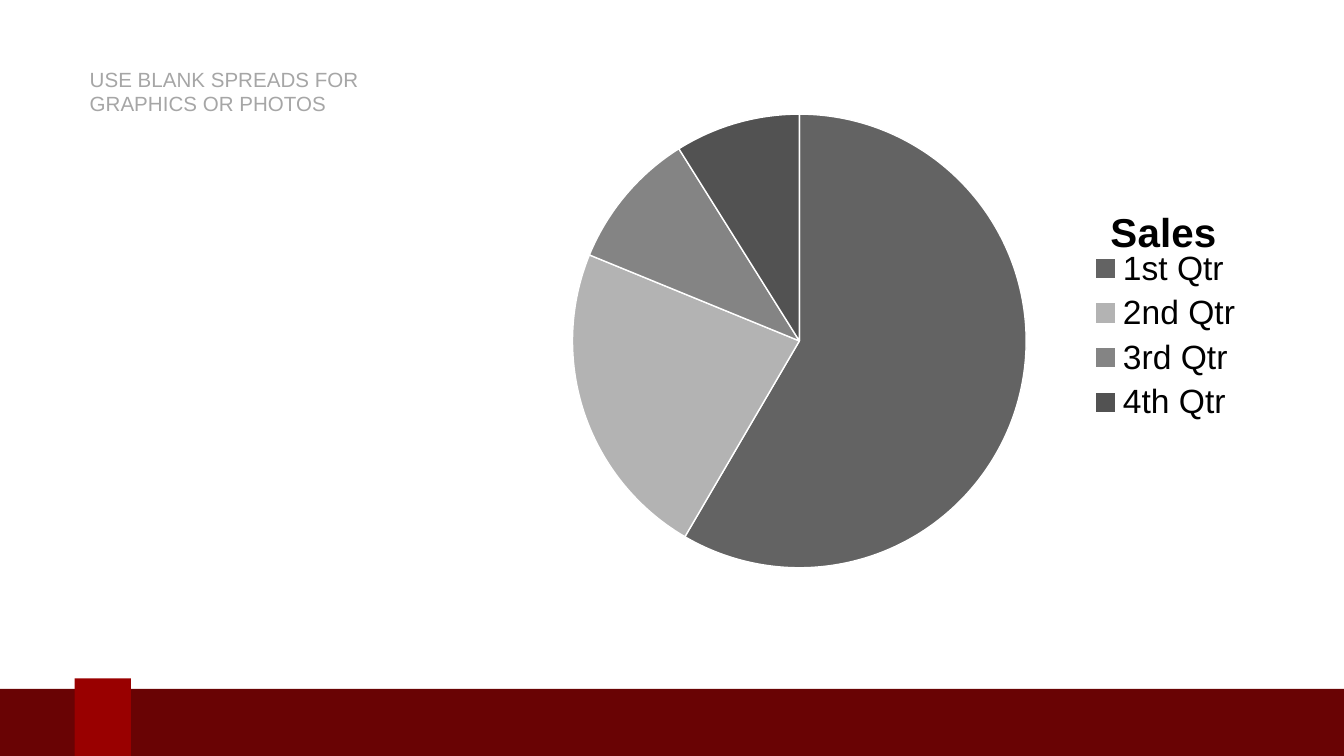
import dataclasses

import lxml.etree
import pptx
import pptx.chart.data
import pptx.dml.color
import pptx.enum.chart
import pptx.enum.shapes
import pptx.enum.text
import pptx.oxml
import pptx.oxml.ns
import pptx.util

Pt = pptx.util.Pt
FACE = "Arial"


@dataclasses.dataclass
class Box:
    left: float
    top: float
    width: float
    height: float

    def place(self) -> list:
        return [Pt(n) for n in (self.left, self.top, self.width, self.height)]


@dataclasses.dataclass
class Bar:
    box: Box
    fill: str


@dataclasses.dataclass
class Slice:
    name: str
    value: int
    fill: str


BARS = [
    Bar(Box(0, 369, 720, 36), "690304"),
    Bar(Box(40, 363.4, 30.2, 41.6), "990000"),
]
SLICES = [
    Slice("1st Qtr", 59, "636363"),
    Slice("2nd Qtr", 23, "B3B3B3"),
    Slice("3rd Qtr", 10, "848484"),
    Slice("4th Qtr", 9, "525252"),
]


def color(code: str) -> pptx.dml.color.RGBColor:
    return pptx.dml.color.RGBColor.from_string(code)


def style(font, size: float, code: str, bold: bool = False) -> None:
    for key, value in {"name": FACE, "size": Pt(size), "bold": bold}.items():
        setattr(font, key, value)
    font.color.rgb = color(code)


def add_bar(slide, bar: Bar) -> None:
    shape = slide.shapes.add_shape(
        pptx.enum.shapes.MSO_SHAPE.RECTANGLE, *bar.box.place())
    shape.shadow.inherit = False
    shape.fill.solid()
    shape.fill.fore_color.rgb = color(bar.fill)
    shape.line.fill.background()


def add_note(slide, box: Box, text: str) -> None:
    frame = slide.shapes.add_textbox(*box.place()).text_frame
    frame.word_wrap = True
    frame.auto_size = pptx.enum.text.MSO_AUTO_SIZE.SHAPE_TO_FIT_TEXT
    run = frame.paragraphs[0].add_run()
    run.text = text
    style(run.font, 11, "A6A6A6")


def set_layout(parent, after: str, values: dict) -> None:
    """Give a chart part a fixed place, as fractions of the chart."""
    qn = pptx.oxml.ns.qn
    for old in parent.findall(qn("c:layout")):
        parent.remove(old)
    layout = lxml.etree.Element(qn("c:layout"))
    manual = lxml.etree.SubElement(layout, qn("c:manualLayout"))
    for key, value in values.items():
        lxml.etree.SubElement(manual, qn(f"c:{key}")).set("val", str(value))
    mark = parent.find(qn(after)) if after else None
    parent.insert(0 if mark is None else parent.index(mark) + 1, layout)


def add_pie(slide, box: Box, title: str, parts: list[Slice]) -> None:
    data = pptx.chart.data.CategoryChartData()
    data.categories = [part.name for part in parts]
    data.add_series(title, [part.value for part in parts])
    chart = slide.shapes.add_chart(
        pptx.enum.chart.XL_CHART_TYPE.PIE, *box.place(), data).chart
    style(chart.font, 18, "000000")

    # Slices
    plot = chart.plots[0]
    plot.vary_by_categories = True
    for index, part in enumerate(parts):
        form = plot.series[0].points[index].format
        form.fill.solid()
        form.fill.fore_color.rgb = color(part.fill)
        form.line.color.rgb = color("FFFFFF")
        form.line.width = Pt(0.75)

    # Title and legend
    chart.has_title = True
    frame = chart.chart_title.text_frame
    frame.text = title
    style(frame.paragraphs[0].runs[0].font, 21.6, "000000", True)
    chart.has_legend = True
    legend = {"position": pptx.enum.chart.XL_LEGEND_POSITION.RIGHT,
              "include_in_layout": False}
    for key, value in legend.items():
        setattr(chart.legend, key, value)
    style(chart.legend.font, 18, "000000")

    # Fixed places, with the title just above the legend
    edge = {"xMode": "edge", "yMode": "edge"}
    root = chart.plots[0]._element.getparent()
    set_layout(root, "", {"layoutTarget": "inner", **edge, "x": 0.2,
                          "y": 0.11, "w": 0.53, "h": 0.8})
    set_layout(chart.chart_title._element, "c:tx",
               {**edge, "x": 0.82, "y": 0.26})


def main() -> None:
    deck = pptx.Presentation()
    deck.slide_width, deck.slide_height = Pt(720), Pt(405)
    slide = deck.slides.add_slide(deck.slide_layouts[6])

    # Footer band and tab
    for bar in BARS:
        add_bar(slide, bar)

    # Note and chart
    add_note(slide, Box(41, 32.2, 200, 33.8),
             "USE BLANK SPREADS FOR GRAPHICS OR PHOTOS")
    add_pie(slide, Box(215, 27, 458.6, 305.3), "Sales", SLICES)
    deck.save("out.pptx")


if __name__ == "__main__":
    main()
